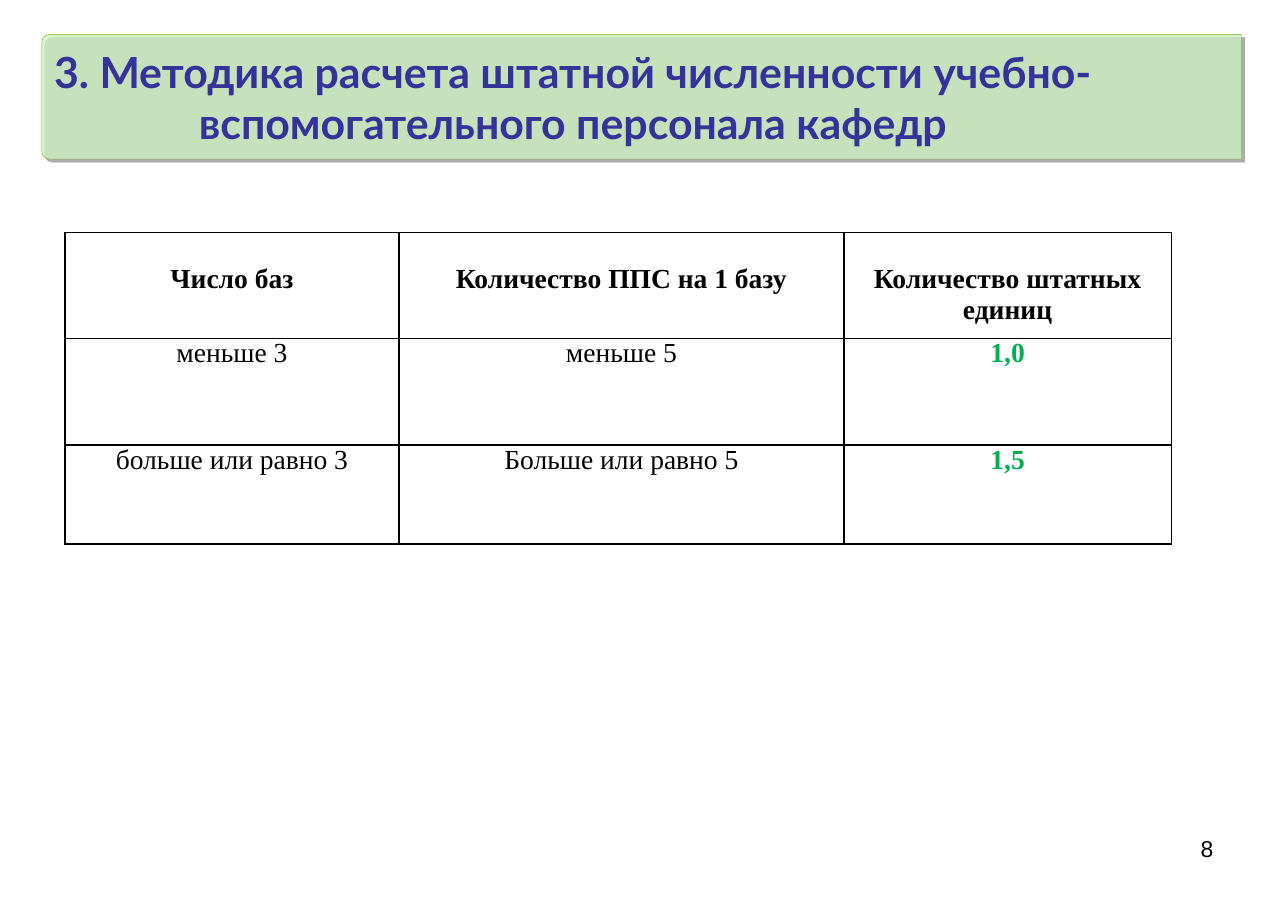
from lxml import etree
from pptx import Presentation
from pptx import util as u
from pptx.dml.color import RGBColor
from pptx.enum import shapes, text
from pptx.oxml import ns

COLORS = {
    "title": "333399",
    "panel": "CDF0C2",
    "panel_line": "78B012",
    "ink": "000000",
    "result": "00B050",
}
HEADER = ["Число баз", "Количество ППС на 1 базу", "Количество штатных единиц"]
ROWS = [
    ["меньше 3", "меньше 5", "1,0"],
    ["больше или равно 3", "Больше или равно 5", "1,5"],
]


def add_element(parent, tag, **attributes):
    return etree.SubElement(parent, ns.qn(tag), attributes)


class SlideBuilder:
    def __init__(self, page):
        self.page = page

    def style(self, para, font, size, color, bold=False, align=text.PP_ALIGN.CENTER):
        para.alignment = align
        para.font.name = font
        para.font.size = u.Pt(size)
        para.font.bold = bold
        para.font.color.rgb = RGBColor.from_string(COLORS[color])

    def panel(self, left, top, width, height):
        """Add a translucent bar, rounded on its left side, with a hard shadow."""
        box = self.page.shapes.add_shape(
            shapes.MSO_SHAPE.ROUND_2_SAME_RECTANGLE,
            u.Pt(left + (width - height) / 2), u.Pt(top + (height - width) / 2),
            u.Pt(height), u.Pt(width))
        box.rotation = 270
        box.adjustments[0] = 0.06
        box.adjustments[1] = 0
        box.fill.solid()
        box.fill.fore_color.rgb = RGBColor.from_string(COLORS["panel"])
        fill = box.element.spPr.find(ns.qn("a:solidFill"))
        add_element(fill[0], "a:alpha", val="80000")
        box.line.color.rgb = RGBColor.from_string(COLORS["panel_line"])
        box.line.width = u.Pt(0.25)
        box.shadow.inherit = False
        effects = box.element.spPr.find(ns.qn("a:effectLst"))
        shadow = add_element(effects, "a:outerShdw", dist=str(u.Pt(3)),
                             dir="2700000", rotWithShape="0")
        shade = add_element(shadow, "a:srgbClr", val=COLORS["ink"])
        add_element(shade, "a:alpha", val="40000")

    def title(self, wording, left, top, width, height):
        box = self.page.shapes.title
        box.left, box.top = u.Pt(left), u.Pt(top)
        box.width, box.height = u.Pt(width), u.Pt(height)
        self.page.shapes.element.append(box.element)  # bring in front of the panel
        frame = box.text_frame
        frame.text = wording
        frame.word_wrap = True
        frame.auto_size = text.MSO_AUTO_SIZE.NONE
        frame.vertical_anchor = text.MSO_ANCHOR.MIDDLE
        frame.margin_left = frame.margin_right = 0
        self.style(frame.paragraphs[0], "Lato", 28, "title", bold=True)

    def cell(self, cell, wording, color, bold, margin_top):
        cell.text = wording
        cell.margin_left = cell.margin_right = u.Pt(5)
        cell.margin_top, cell.margin_bottom = u.Pt(margin_top), 0
        self.style(cell.text_frame.paragraphs[0], "Times New Roman", 18, color, bold)
        properties = cell._tc.get_or_add_tcPr()
        for side in ("a:lnL", "a:lnR", "a:lnT", "a:lnB"):
            border = add_element(properties, side, w=str(u.Pt(1)))
            add_element(add_element(border, "a:solidFill"), "a:srgbClr", val=COLORS["ink"])
        cell.fill.background()

    def table(self, left, top, widths, heights):
        table = self.page.shapes.add_table(
            len(heights), len(widths), u.Pt(left), u.Pt(top),
            u.Pt(sum(widths)), u.Pt(sum(heights))).table
        table.first_row = table.horz_banding = False
        for column, width in zip(table.columns, widths):
            column.width = u.Pt(width)
        for row, height in zip(table.rows, heights):
            row.height = u.Pt(height)
        for r, wordings in enumerate([HEADER] + ROWS):
            for c, wording in enumerate(wordings):
                is_header = r == 0
                is_result = not is_header and c == len(widths) - 1
                self.cell(table.cell(r, c), wording,
                          "result" if is_result else "ink",
                          is_header or is_result, 20.7 if is_header else 0)

    def page_number(self, number, left, top, width, height):
        box = self.page.shapes.add_textbox(u.Pt(left), u.Pt(top), u.Pt(width), u.Pt(height))
        box.text_frame.word_wrap = True
        box.text_frame.text = number
        self.style(box.text_frame.paragraphs[0], "Arial", 15, "ink",
                   align=text.PP_ALIGN.RIGHT)


def main():
    deck = Presentation()
    deck.slide_width, deck.slide_height = u.Pt(841.68), u.Pt(595.44)
    builder = SlideBuilder(deck.slides.add_slide(deck.slide_layouts[5]))
    builder.page_number("8", 603.4, 542.2, 196.6, 41)
    builder.table(42.5, 152, [218.2, 290.9, 213.8], [69.1, 69.8, 64.8])
    builder.panel(27.3, 22.5, 784, 81.4)
    builder.title("3. Методика расчета штатной численности "
                  "учебно-вспомогательного персонала кафедр", 27.3, 22.5, 694, 81.4)
    deck.save("out.pptx")


if __name__ == "__main__":
    main()
